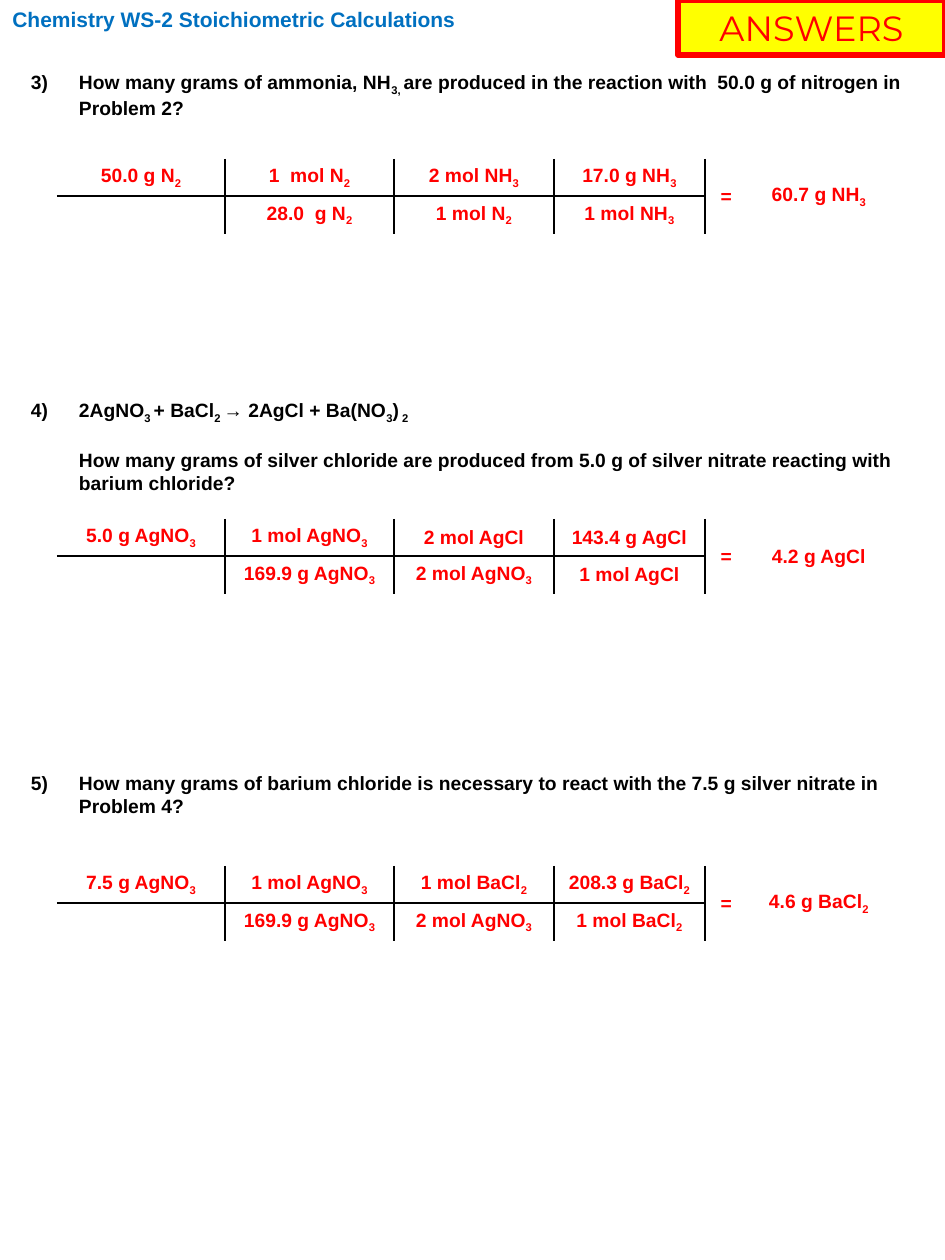
from dataclasses import dataclass

from lxml.etree import SubElement
from pptx import Presentation
from pptx.dml.color import RGBColor
from pptx.enum.shapes import MSO_SHAPE
from pptx.enum.text import MSO_ANCHOR, PP_ALIGN
from pptx.oxml.ns import qn
from pptx.slide import Slide
from pptx.table import _Cell
from pptx.text.text import TextFrame, _Paragraph
from pptx.util import Emu, Pt

COLORS = {
    "title": "0070C0",
    "question": "000000",
    "answer": "FF0000",
    "badge": "FFFF00",
    "rule": "000000",
}
PAGE_WIDTH, PAGE_HEIGHT = 945, 1260
EMU_PER_PX = 914400 / 126
TABLE_LEFT = 57
COLUMN_WIDTHS = (168, 169, 160, 151, 43, 142)
ROW_HEIGHT = 37
FACTOR_COUNT = 4
NUMBER_INDENT = 48
NO_GRID_STYLE = "{2D5ABB26-0587-4C30-8999-92F81FD0307C}"


@dataclass
class Problem:
    """A question and its conversion table; subscripts stand between underscores."""
    question_top: int
    question: tuple[str, ...]
    table_top: int
    numerators: tuple[str, ...]
    denominators: tuple[str, ...]
    result: str


PROBLEMS = (
    Problem(
        70,
        ("3)\tHow many grams of ammonia, NH_3, _are produced in the reaction with  "
         "50.0 g of nitrogen in Problem 2?",),
        159,
        ("50.0 g N_2_", "1  mol N_2_", "2 mol NH_3_", "17.0 g NH_3_"),
        ("", "28.0  g N_2_", "1 mol N_2_", "1 mol NH_3_"),
        "60.7 g NH_3_",
    ),
    Problem(
        398,
        ("4)\t2AgNO_3 _+ BaCl_2 _→ 2AgCl + Ba(NO_3_)_ 2_",
         "\tHow many grams of silver chloride are produced from 5.0 g of silver "
         "nitrate reacting with barium chloride?"),
        519,
        ("5.0 g AgNO_3_", "1 mol AgNO_3_", "2 mol AgCl", "143.4 g AgCl"),
        ("", "169.9 g AgNO_3_", "2 mol AgNO_3_", "1 mol AgCl"),
        "4.2 g AgCl",
    ),
    Problem(
        771,
        ("5)\tHow many grams of barium chloride is necessary to react with the "
         "7.5 g silver nitrate in Problem 4?",),
        866,
        ("7.5 g AgNO_3_", "1 mol AgNO_3_", "1 mol BaCl_2_", "208.3 g BaCl_2_"),
        ("", "169.9 g AgNO_3_", "2 mol AgNO_3_", "1 mol BaCl_2_"),
        "4.6 g BaCl_2_",
    ),
)


def px(length: int) -> Emu:
    return Emu(round(length * EMU_PER_PX))


def write(para: _Paragraph, text: str, color: str, size: int = 11,
          font: str = "Arial", bold: bool = True) -> None:
    """Write styled text, lowering the parts between underscores."""
    for index, part in enumerate(text.split("_")):
        if not part:
            continue
        span = para.add_run()
        span.text = part
        span.font.size = Pt(size)
        span.font.name = font
        span.font.bold = bold
        span.font.color.rgb = RGBColor.from_string(COLORS[color])
        if index % 2:
            span._r.get_or_add_rPr().set("baseline", "-25000")


def add_text_frame(page: Slide, left: int, top: int, width: int, height: int) -> TextFrame:
    box = page.shapes.add_textbox(px(left), px(top), px(width), px(height))
    box.text_frame.word_wrap = True
    return box.text_frame


def add_question(page: Slide, problem: Problem) -> None:
    frame = add_text_frame(page, 31, problem.question_top, 882, 50 * len(problem.question))
    frame.margin_left = frame.margin_right = frame.margin_top = frame.margin_bottom = 0
    for index, text in enumerate(problem.question):
        para = frame.add_paragraph() if index else frame.paragraphs[0]
        properties = para._p.get_or_add_pPr()
        properties.set("marL", str(px(NUMBER_INDENT)))
        properties.set("indent", str(-px(NUMBER_INDENT)))
        if index:
            para.space_before = px(24)
        write(para, text, "question")


def add_border(cell: _Cell, side: str) -> None:
    line = SubElement(cell._tc.get_or_add_tcPr(), qn(f"a:ln{side}"), w=str(Pt(1.5)))
    fill = SubElement(line, qn("a:solidFill"))
    SubElement(fill, qn("a:srgbClr"), val=COLORS["rule"])


def fill_cell(cell: _Cell, text: str, sides: str = "") -> None:
    """Fill a cell; sides lists its borders in the order L, R, T, B."""
    cell.margin_top = cell.margin_bottom = 0
    cell.vertical_anchor = MSO_ANCHOR.MIDDLE
    for side in sides:
        add_border(cell, side)
    cell.fill.background()
    para = cell.text_frame.paragraphs[0]
    para.alignment = PP_ALIGN.CENTER
    write(para, text, "answer")


def add_conversion(page: Slide, problem: Problem) -> None:
    frame = page.shapes.add_table(
        2, len(COLUMN_WIDTHS), px(TABLE_LEFT), px(problem.table_top),
        px(sum(COLUMN_WIDTHS)), px(2 * ROW_HEIGHT))
    table = frame.table
    table.first_row = table.horz_banding = False
    table._tbl.tblPr.find(qn("a:tableStyleId")).text = NO_GRID_STYLE
    for column, width in zip(table.columns, COLUMN_WIDTHS):
        column.width = px(width)
    for row in table.rows:
        row.height = px(ROW_HEIGHT)

    last = FACTOR_COUNT - 1
    for row, factors in enumerate((problem.numerators, problem.denominators)):
        for column, text in enumerate(factors):
            left = "L" if column > 0 else ""
            right = "R" if column < last else ""
            fill_cell(table.cell(row, column), text, left + right + "BT"[row])

    for column, text in enumerate(("=", problem.result), FACTOR_COUNT):
        table.cell(0, column).merge(table.cell(1, column))
        fill_cell(table.cell(0, column), text)
        fill_cell(table.cell(1, column), "")


def add_badge(page: Slide) -> None:
    badge = page.shapes.add_shape(MSO_SHAPE.RECTANGLE, px(678), 0, px(267), px(55))
    badge.shadow.inherit = False
    badge.fill.solid()
    badge.fill.fore_color.rgb = RGBColor.from_string(COLORS["badge"])
    badge.line.color.rgb = RGBColor.from_string(COLORS["answer"])
    badge.line.width = Pt(3)
    badge.text_frame.vertical_anchor = MSO_ANCHOR.MIDDLE
    para = badge.text_frame.paragraphs[0]
    para.alignment = PP_ALIGN.CENTER
    write(para, "ANSWERS", "answer", 20, "Montserrat", False)


def main() -> None:
    deck = Presentation()
    deck.slide_width, deck.slide_height = px(PAGE_WIDTH), px(PAGE_HEIGHT)
    page = deck.slides.add_slide(deck.slide_layouts[6])
    title = add_text_frame(page, 0, 0, 717, 44)
    write(title.paragraphs[0], "Chemistry WS-2 Stoichiometric Calculations", "title", 12)
    for problem in PROBLEMS:
        add_question(page, problem)
        add_conversion(page, problem)
    add_badge(page)
    deck.save("out.pptx")


if __name__ == "__main__":
    main()
